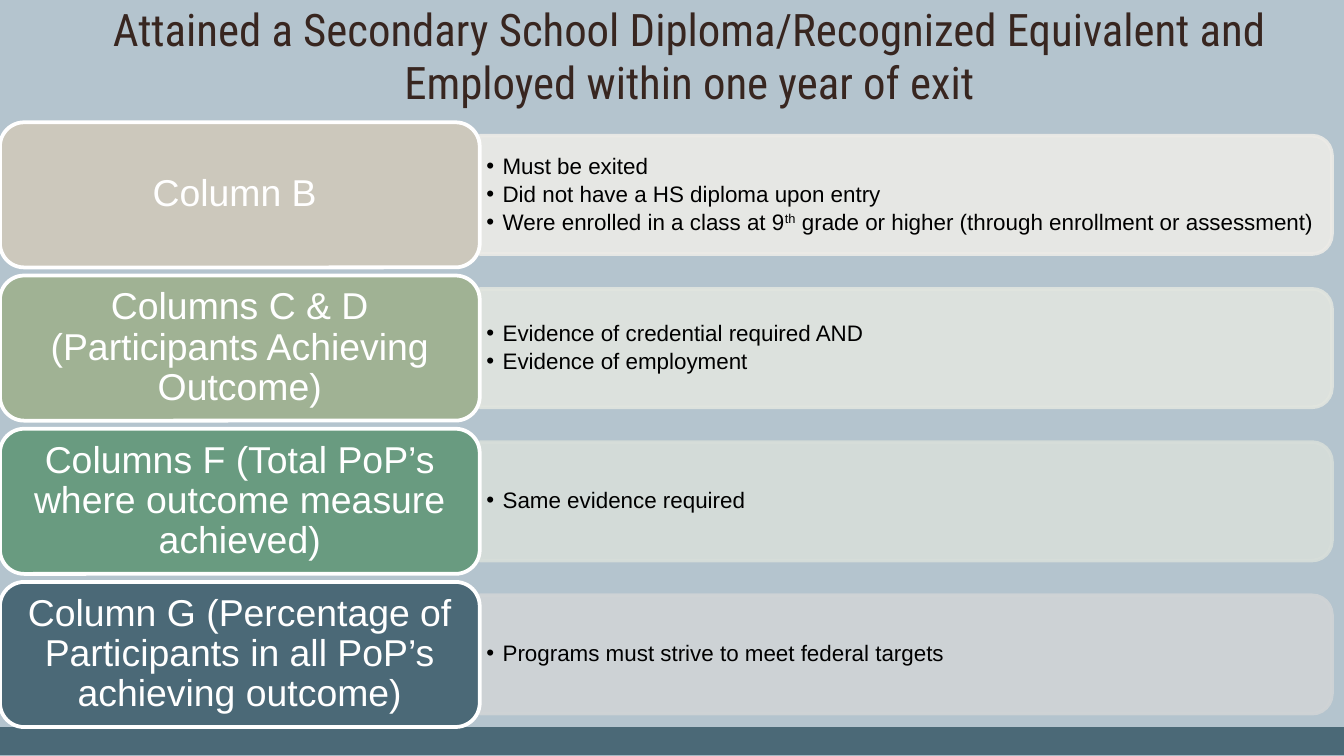
import pptx
import pptx.util
import pptx.dml.color
import pptx.enum.shapes
import pptx.enum.text
from dataclasses import dataclass
from lxml import etree
from pptx.oxml.ns import qn

Inches = pptx.util.Inches
Pt = pptx.util.Pt
Kind = pptx.enum.shapes.MSO_SHAPE
Align = pptx.enum.text.PP_ALIGN
Anchor = pptx.enum.text.MSO_ANCHOR


@dataclass(frozen=True)
class Theme:
    back: str = "B4C4CE"
    base: str = "4B6977"
    head: str = "382620"
    light: str = "FFFFFF"
    dark: str = "000000"
    title: int = 24
    label: int = 20
    body: int = 12
    edge: int = 2
    font: str = "Arial"
    display: str = "Roboto Condensed"


THEME = Theme()

ROWS = [
    ("Column B ", "CCC8BC", "ECEBE7", [
        ["Must be exited"],
        ["Did not have a HS diploma upon entry"],
        ["Were enrolled in a class at 9", "th",
         " grade or higher (through enrollment or assessment)"],
    ]),
    ("Columns C & D (Participants Achieving Outcome)", "A0B294", "E1E5DF", [
        ["Evidence of credential required AND"],
        ["Evidence of employment"],
    ]),
    ("Columns F (Total PoP’s where outcome measure achieved)", "699B80", "D7DEDA", [
        ["Same evidence required"],
    ]),
    ("Column G (Percentage of Participants in all PoP’s achieving outcome)",
     "4B6977", "D0D4D6", [
        ["Programs must strive to meet federal targets"],
    ]),
]


def paint(fill, color, alpha=None):
    fill.solid()
    fill.fore_color.rgb = pptx.dml.color.RGBColor.from_string(color)
    if alpha:
        for node in fill._xPr.iter(qn("a:srgbClr")):
            etree.SubElement(node, qn("a:alpha"), val=str(alpha * 1000))


def style(para, size, color, font):
    para.font.size = Pt(size)
    para.font.name = font
    para.font.color.rgb = pptx.dml.color.RGBColor.from_string(color)


def frame(shape, anchor, side, edge):
    text = shape.text_frame
    text.word_wrap = True
    text.auto_size = pptx.enum.text.MSO_AUTO_SIZE.NONE
    text.vertical_anchor = anchor
    text.margin_left = text.margin_right = Inches(side)
    text.margin_top = text.margin_bottom = Inches(edge)
    return text


def block(slide, kind, box, color, line=None, alpha=None):
    shape = slide.shapes.add_shape(kind, *map(Inches, box))
    shape.shadow.inherit = False
    paint(shape.fill, color, alpha)
    if line:
        shape.line.width = Pt(THEME.edge)
        paint(shape.line.fill, line, alpha)
    else:
        shape.line.fill.background()
    return shape


def header(slide, box):
    title = slide.shapes.title
    title.left, title.top, title.width, title.height = map(Inches, box)
    text = frame(title, Anchor.BOTTOM, 0.1, 0.1)
    text.text = ("Attained a Secondary School Diploma/Recognized Equivalent "
                 "and Employed within one year of exit")
    para = text.paragraphs[0]
    para.alignment = Align.CENTER
    style(para, THEME.title, THEME.head, THEME.display)


def label(slide, box, words, color):
    shape = block(slide, Kind.ROUNDED_RECTANGLE, box, color, THEME.light)
    text = frame(shape, Anchor.MIDDLE, 0.13, 0.09)
    text.text = words
    para = text.paragraphs[0]
    para.alignment = Align.CENTER
    para.line_spacing = 0.9
    style(para, THEME.label, THEME.light, THEME.font)


def bullet(para):
    props = para._p.get_or_add_pPr()
    props.set("marL", str(Inches(0.12)))
    props.set("indent", str(Inches(-0.12)))
    tint = etree.SubElement(props, qn("a:buClr"))
    etree.SubElement(tint, qn("a:srgbClr"), val=THEME.dark)
    etree.SubElement(props, qn("a:buFont"), typeface=THEME.font)
    etree.SubElement(props, qn("a:buChar"), char="•")


def panel(slide, box, color, items):
    left, top, width, height = box
    turned = (left + (width - height) / 2, top + (height - width) / 2, height, width)
    shape = block(slide, Kind.ROUND_2_SAME_RECTANGLE, turned, color, color, 90)
    shape.rotation = 90

    area = (left, top + 0.05, width - 0.04, height - 0.1)
    text = frame(slide.shapes.add_textbox(*map(Inches, area)), Anchor.MIDDLE, 0.05, 0.03)
    for spot, item in enumerate(items):
        para = text.add_paragraph() if spot else text.paragraphs[0]
        para.line_spacing = 0.9
        para.space_after = Pt(2)
        bullet(para)
        style(para, THEME.body, THEME.dark, THEME.font)
        for part in item:
            run = para.add_run()
            run.text = part
            if part == "th":
                run._r.get_or_add_rPr().set("baseline", "30000")


def row(slide, box, words, color, tint, items):
    left, top, width, height = box
    split = 3.57
    inset = 0.1
    panel(slide, (left + split, top + inset, width - split, height - 2 * inset),
          tint, items)
    label(slide, (left, top, split, height), words, color)


def main():
    deck = pptx.Presentation()
    deck.slide_width = Inches(10)
    deck.slide_height = deck.slide_width * 9 // 16
    slide = deck.slides.add_slide(deck.slide_layouts[5])
    paint(slide.background.fill, THEME.back)
    block(slide, Kind.RECTANGLE, (0, 5.41, 10, 0.21), THEME.base)
    header(slide, (0.34, 0, 9.58, 0.91))
    for spot, data in enumerate(ROWS):
        row(slide, (0, 0.91 + 1.14 * spot, 9.91, 1.08), *data)
    deck.save("out.pptx")


if __name__ == "__main__":
    main()
